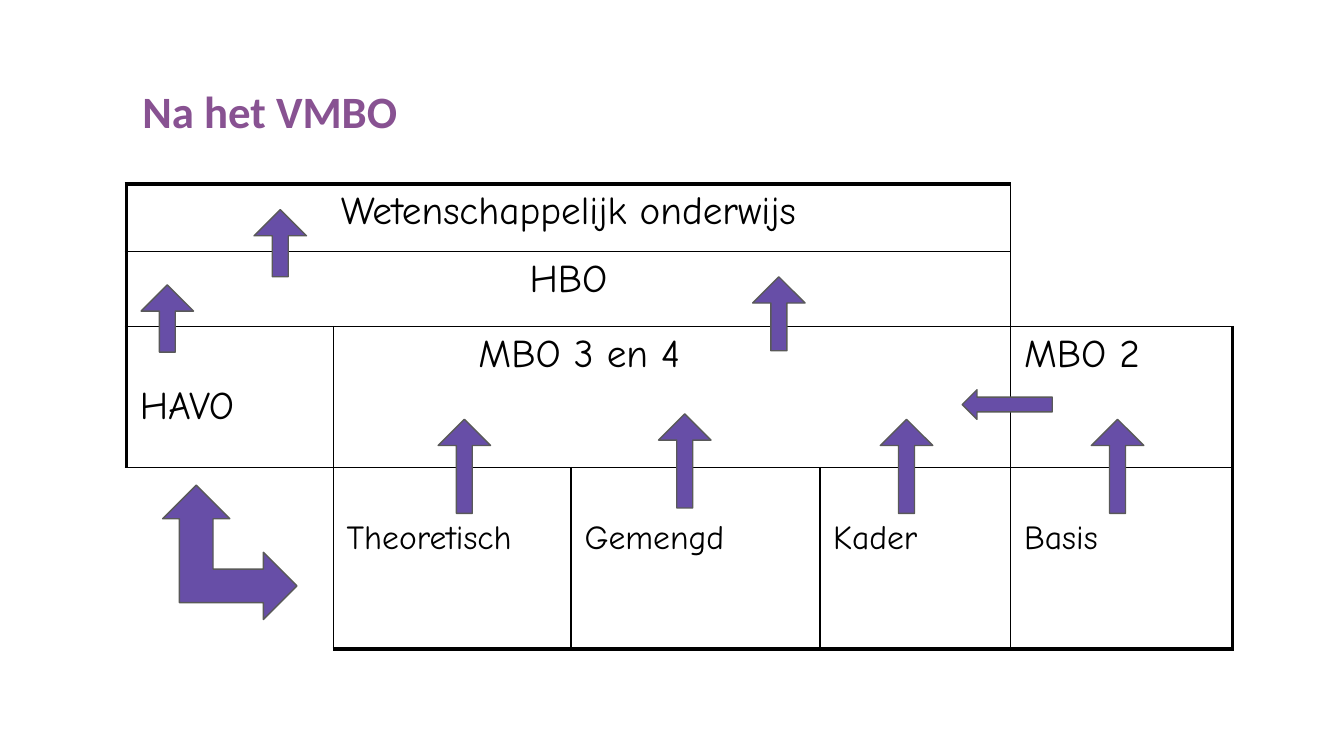
from lxml.etree import SubElement
from pptx import Presentation
from pptx.dml.color import RGBColor
from pptx.enum.shapes import MSO_SHAPE
from pptx.enum.text import MSO_ANCHOR, PP_ALIGN
from pptx.oxml.ns import qn
from pptx.util import Inches, Pt

# Each letter is one area of the table; a dot is an empty cell.
GRID = ["WWWW.", "HHHH.", "AMMM2", ".TGKB"]
COLS = [1.54, 1.77, 1.85, 1.42, 1.65]
ROWS = [0.5, 0.56, 1.05, 1.35]
# area: text, size, alignment, left margin, top margin
AREAS = {
    "W": ("Wetenschappelijk onderwijs", 21, PP_ALIGN.CENTER, 0.1, 0.04),
    "H": ("HBO", 21, PP_ALIGN.CENTER, 0.1, 0.04),
    "A": ("HAVO", 21, PP_ALIGN.LEFT, 0.1, 0.43),
    "M": ("MBO 3 en 4", 21, PP_ALIGN.LEFT, 1.08, 0.04),
    "2": ("MBO 2", 21, PP_ALIGN.LEFT, 0.1, 0.04),
    "T": ("Theoretisch", 18, PP_ALIGN.LEFT, 0.1, 0.38),
    "G": ("Gemengd", 18, PP_ALIGN.LEFT, 0.1, 0.38),
    "K": ("Kader", 18, PP_ALIGN.LEFT, 0.1, 0.38),
    "B": ("Basis", 18, PP_ALIGN.LEFT, 0.1, 0.38),
}
SIDES = {"lnL": (0, -1), "lnR": (0, 1), "lnT": (-1, 0), "lnB": (1, 0)}


def color(code):
    return RGBColor.from_string(code)


def edge(row, col, step):
    """Width of a cell edge: thick on the rim, thin between areas."""
    area = GRID[row][col]
    near, side = row + step[0], col + step[1]
    if not (0 <= near < len(ROWS) and 0 <= side < len(COLS)):
        return 0 if area == "." else 2.25
    return 0 if GRID[near][side] == area else 1


def border(cell, row, col):
    props = cell._tc.get_or_add_tcPr()
    for tag, step in SIDES.items():
        width = edge(row, col, step)
        line = SubElement(props, qn("a:" + tag), w=str(Pt(width)))
        if width:
            fill = SubElement(line, qn("a:solidFill"))
            SubElement(fill, qn("a:srgbClr"), val="000000")
        else:
            SubElement(line, qn("a:noFill"))


def label(cell, text, size, align, left, top):
    cell.margin_left, cell.margin_right = Inches(left), Inches(0.1)
    cell.margin_top, cell.margin_bottom = Inches(top), Inches(0.04)
    cell.text = text
    para = cell.text_frame.paragraphs[0]
    para.alignment = align
    para.font.size = Pt(size)
    para.font.name = "Comic Neue"
    para.font.color.rgb = color("000000")


def add_title(slide, x, y, w, h):
    title = slide.shapes.title
    title.left, title.top = Inches(x), Inches(y)
    title.width, title.height = Inches(w), Inches(h)
    frame = title.text_frame
    frame.text = "Na het VMBO"
    frame.vertical_anchor = MSO_ANCHOR.MIDDLE
    para = frame.paragraphs[0]
    para.alignment = PP_ALIGN.LEFT
    para.font.size = Pt(24)
    para.font.bold = True
    para.font.name = "Calibri"
    para.font.color.rgb = color("885292")


def add_levels(slide, x, y):
    """Table of school levels, with one merged cell for each area."""
    table = slide.shapes.add_table(
        len(ROWS), len(COLS), Inches(x), Inches(y),
        Inches(sum(COLS)), Inches(sum(ROWS))).table
    table.first_row = table.horz_banding = False
    for col, width in zip(table.columns, COLS):
        col.width = Inches(width)
    for row, height in zip(table.rows, ROWS):
        row.height = Inches(height)
    for r, line in enumerate(GRID):
        for c, area in enumerate(line):
            cell = table.cell(r, c)
            border(cell, r, c)
            cell.fill.background()
            if area != "." and line.index(area) == c:
                if line.count(area) > 1:
                    cell.merge(table.cell(r, line.rindex(area)))
                label(cell, *AREAS[area])


def add_arrow(slide, kind, x, y, w, h, shaft=None, turn=0):
    arrow = slide.shapes.add_shape(
        kind, Inches(x), Inches(y), Inches(w), Inches(h))
    arrow.shadow.inherit = False
    arrow.fill.solid()
    arrow.fill.fore_color.rgb = color("674EA7")
    arrow.line.color.rgb = color("595959")
    arrow.line.width = Pt(0.75)
    arrow.rotation = turn
    if shaft:
        arrow.adjustments[0] = shaft


def add_routes(slide, x, y):
    """Arrows between the levels, measured from the table corner."""
    ups = [(2.32, 1.75, 0.7), (3.96, 1.71, 0.7), (5.61, 1.75, 0.7),
           (7.18, 1.75, 0.7), (0.11, 0.75, 0.5), (4.66, 0.69, 0.55),
           (0.95, 0.19, 0.5)]
    for left, top, high in ups:
        add_arrow(slide, MSO_SHAPE.UP_ARROW, x + left, y + top,
                  0.39, high, 0.305)
    add_arrow(slide, MSO_SHAPE.LEFT_ARROW, x + 6.22, y + 1.53, 0.67, 0.22)
    add_arrow(slide, MSO_SHAPE.LEFT_UP_ARROW, x + 0.27, y + 2.24, 1, 1,
              turn=90)


def main():
    deck = Presentation()
    deck.slide_width, deck.slide_height = Inches(10), Inches(10 * 9 / 16)
    slide = deck.slides.add_slide(deck.slide_layouts[5])
    add_title(slide, 0.96, 0.36, 9.32, 0.92)
    add_levels(slide, 0.94, 1.37)
    add_routes(slide, 0.94, 1.37)
    deck.save("out.pptx")


if __name__ == "__main__":
    main()
